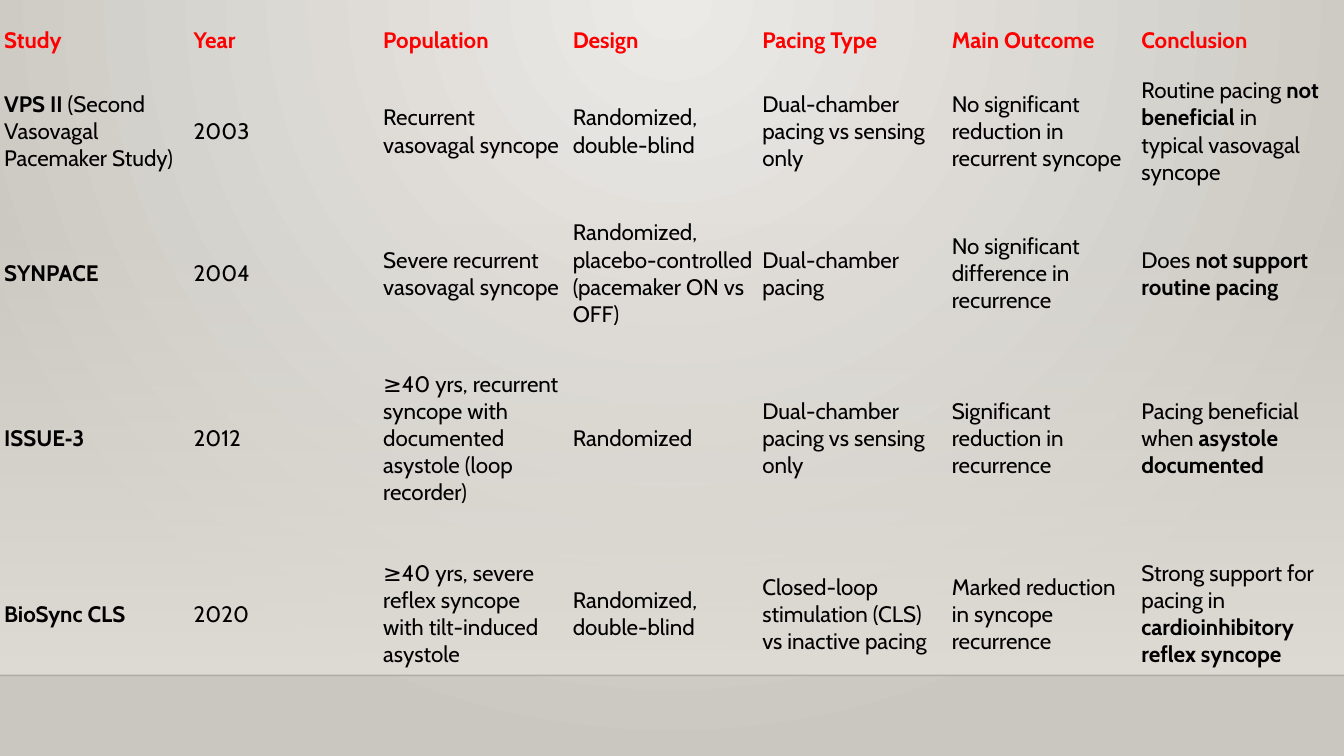
from lxml.etree import SubElement as Sub
from pptx import Presentation
from pptx.dml.color import RGBColor as Rgb
from pptx.enum.shapes import MSO_CONNECTOR as Conn, MSO_SHAPE as Kind
from pptx.enum.text import MSO_ANCHOR as Anchor
from pptx.oxml.ns import qn
from pptx.util import Pt

WIDE, HIGH, FLOOR = 960, 540, 482.4
HUES = {"glow": "ECEAE7", "edge": "CAC7C1", "floor": "DFDBD5",
        "line": "000001", "head": "FF0000", "text": "000000"}
BARE = "{2D5ABB26-0587-4C30-8999-92F81FD0307C}"
COLS = [135.4] * 6 + [133.9]
ROWS = [28.1, 101.5, 101.5, 133.9, 117.4]
CELLS = [
    ["*Study*", "*Year*", "*Population*", "*Design*", "*Pacing Type*",
     "*Main Outcome*", "*Conclusion*"],
    ["*VPS II* (Second Vasovagal Pacemaker Study)", "2003",
     "Recurrent vasovagal syncope", "Randomized, double-blind",
     "Dual-chamber pacing vs sensing only",
     "No significant reduction in recurrent syncope",
     "Routine pacing *not beneficial* in typical vasovagal syncope"],
    ["*SYNPACE*", "2004", "Severe recurrent vasovagal syncope",
     "Randomized, placebo-controlled (pacemaker ON vs OFF)",
     "Dual-chamber pacing", "No significant difference in recurrence",
     "Does *not support routine pacing*"],
    ["*ISSUE‑3*", "2012",
     "≥40 yrs, recurrent syncope with documented asystole (loop recorder)",
     "Randomized", "Dual-chamber pacing vs sensing only",
     "Significant reduction in recurrence",
     "Pacing beneficial when *asystole documented*"],
    ["*BioSync CLS*", "2020",
     "≥40 yrs, severe reflex syncope with tilt-induced asystole",
     "Randomized, double-blind",
     "Closed-loop stimulation (CLS) vs inactive pacing",
     "Marked reduction in syncope recurrence",
     "Strong support for pacing in *cardioinhibitory reflex syncope*"],
]


class Board:
    def __init__(self, slide, font, size):
        self.slide, self.font, self.size = slide, font, size

    def hue(self, name):
        return Rgb.from_string(HUES[name])

    def fade(self, fill, names):
        fill.gradient()
        for stop, name, spot in zip(fill.gradient_stops, names, (0, 1)):
            stop.color.rgb = self.hue(name)
            stop.position = spot

    def clear(self, root, share):
        tint = next(root.iter(qn("a:srgbClr")))
        Sub(tint, qn("a:alpha"), val=str(share * 1000))

    def back(self, *names):
        self.fade(self.slide.background.fill, names)
        grad = next(self.slide.element.iter(qn("a:gradFill")))
        grad.remove(grad.find(qn("a:lin")))
        ring = Sub(grad, qn("a:path"), path="circle")
        Sub(ring, qn("a:fillToRect"), l="43000", t="0", r="43000", b="100000")

    def panel(self, left, top, width, height, name):
        box = self.slide.shapes.add_shape(
            Kind.RECTANGLE, Pt(left), Pt(top), Pt(width), Pt(height))
        box.shadow.inherit = False
        box.line.fill.background()
        self.fade(box.fill, (name, name))
        box.fill.gradient_angle = 270
        self.clear(box.element.spPr, 0)

    def rule(self, left, top, width, name, share):
        line = self.slide.shapes.add_connector(
            Conn.STRAIGHT, Pt(left), Pt(top), Pt(left + width), Pt(top))
        line.line.width = Pt(1)
        line.line.color.rgb = self.hue(name)
        self.clear(line.element.spPr, share)
        Sub(line.element.spPr, qn("a:effectLst"))

    def label(self, cell, text, name):
        cell.fill.background()
        cell.vertical_anchor = Anchor.MIDDLE
        cell.margin_left = cell.margin_right = Pt(3)
        cell.margin_top = cell.margin_bottom = Pt(1.5)
        para = cell.text_frame.paragraphs[0]
        for part, words in enumerate(text.split("*")):
            if words:
                run = para.add_run()
                run.text = words
                run.font.name = self.font
                run.font.size = Pt(self.size)
                run.font.bold = part % 2 == 1
                run.font.color.rgb = self.hue(name)

    def grid(self, left, top, cols, rows, cells):
        frame = self.slide.shapes.add_table(
            len(rows), len(cols), Pt(left), Pt(top), Pt(sum(cols)), Pt(sum(rows)))
        table = frame.table
        table.first_row = table.horz_banding = False
        next(frame.element.iter(qn("a:tableStyleId"))).text = BARE
        for col, width in zip(table.columns, cols):
            col.width = Pt(width)
        for row, height, texts in zip(table.rows, rows, cells):
            row.height = Pt(height)
            name = "head" if texts is cells[0] else "text"
            for cell, text in zip(row.cells, texts):
                self.label(cell, text, name)


def main():
    deck = Presentation()
    deck.slide_width, deck.slide_height = Pt(WIDE), Pt(HIGH)
    board = Board(deck.slides.add_slide(deck.slide_layouts[6]), "Cabin", 16)
    board.back("glow", "edge")
    board.panel(0, 159.1, WIDE, FLOOR - 159.1, "floor")
    board.rule(0, FLOOR, WIDE, "line", 20)
    board.grid(0, 15.1, COLS, ROWS, CELLS)
    deck.save("out.pptx")


if __name__ == "__main__":
    main()
